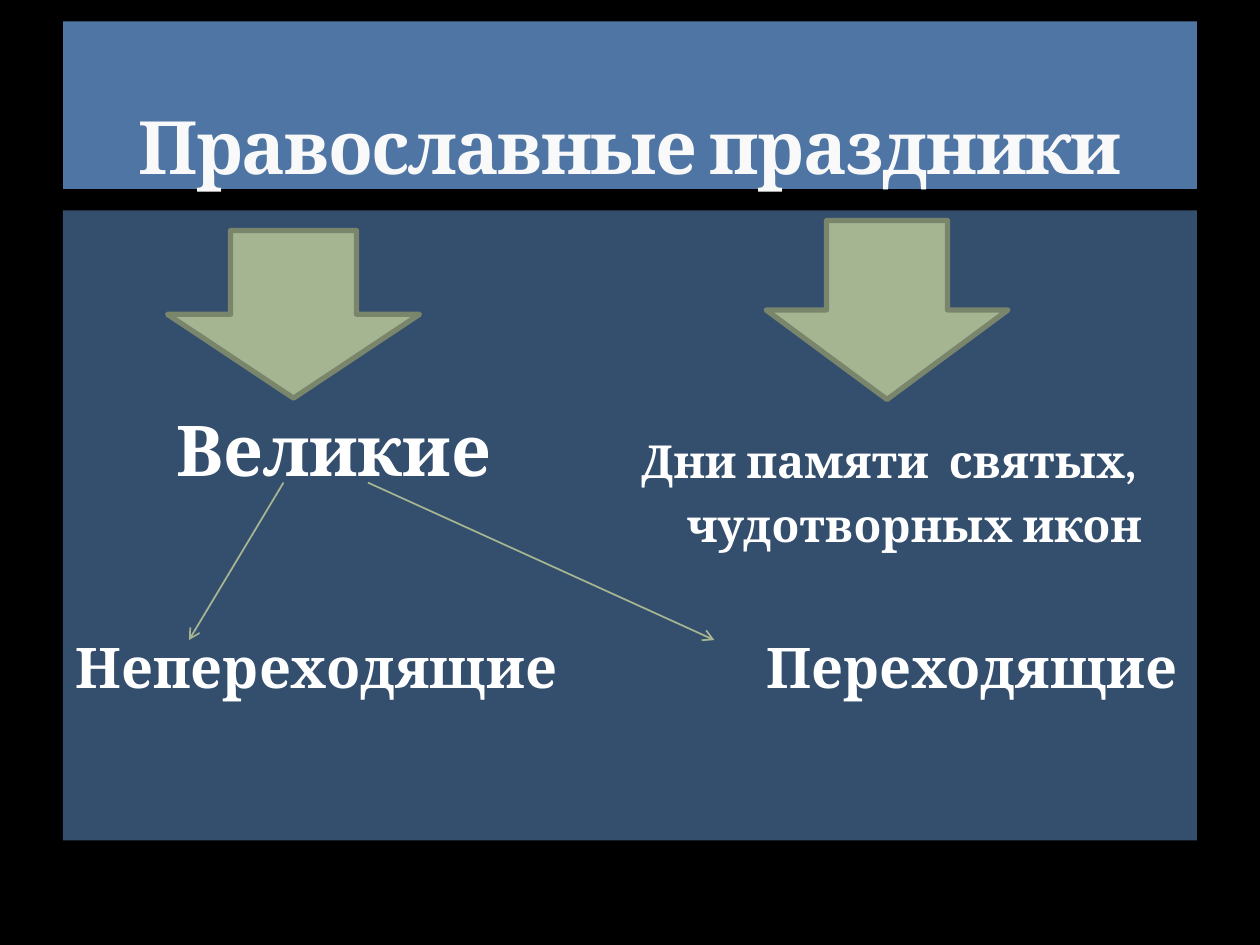
from pptx import Presentation
from pptx import util as u
from pptx.dml.color import RGBColor
from pptx.enum import shapes, text
from pptx.oxml import parse_xml
from pptx.oxml.ns import nsdecls, qn
from lxml import etree

COLORS = {
    "background": "000000", "title_bar": "4E75A3", "panel": "344E6D",
    "arrow": "A5B592", "arrow_edge": "7A866C",
    "title": "F9F9F9", "text": "FFFFFF", "text_edge": "3C4422",
}
FONT = "Cambria"
MARGIN, CONTENT_W = 0.5, 9


def color(name):
    return RGBColor.from_string(COLORS[name])


def inches(*lengths):
    return [u.Inches(n) for n in lengths]


def paint(fill, name):
    fill.solid()
    fill.fore_color.rgb = color(name)


def clear_margins(tf):
    tf.margin_left = tf.margin_right = tf.margin_top = tf.margin_bottom = 0


def add_run(p, words, size, name="text"):
    r = p.add_run()
    r.text = words
    r.font.name, r.font.size, r.font.bold = FONT, u.Pt(size), True
    r.font.color.rgb = color(name)
    return r


def set_title(s, words):
    sp = s.shapes.title
    sp.left, sp.top, sp.width, sp.height = inches(MARGIN, 0.17, CONTENT_W, 1.33)
    paint(sp.fill, "title_bar")
    tf = sp.text_frame
    clear_margins(tf)
    tf.vertical_anchor = text.MSO_ANCHOR.BOTTOM
    p = tf.paragraphs[0]
    p.alignment = text.PP_ALIGN.CENTER
    r = add_run(p, words, 42, "title")
    # Tight letter spacing and a faint outline around the letters
    props = r.font._element
    props.set("spc", "-100")
    props.insert(0, parse_xml(
        f'<a:ln {nsdecls("a")} w="3175"><a:solidFill>'
        f'<a:srgbClr val="{COLORS["text_edge"]}"><a:alpha val="25000"/></a:srgbClr>'
        '</a:solidFill><a:prstDash val="solid"/></a:ln>'))


def add_block(s, kind, box, fill, edge=None):
    sp = s.shapes.add_shape(kind, *inches(*box))
    sp.shadow.inherit = False
    paint(sp.fill, fill)
    if edge:
        sp.line.color.rgb = color(edge)
        sp.line.width = u.Pt(3)
    else:
        sp.line.fill.background()


def add_label(s, box, lines, size, indent=0):
    tf = s.shapes.add_textbox(*inches(*box)).text_frame
    tf.word_wrap = True
    clear_margins(tf)
    for i, words in enumerate(lines):
        p = tf.add_paragraph() if i else tf.paragraphs[0]
        if i:
            p.space_before = u.Pt(5)
            p._p.get_or_add_pPr().set("marL", str(u.Inches(indent)))
        add_run(p, words, size)


def add_pointer(s, start, end):
    line = s.shapes.add_connector(
        shapes.MSO_CONNECTOR.STRAIGHT, *inches(*start, *end))
    line.line.color.rgb = color("arrow")
    line.line.width = u.Pt(1)
    etree.SubElement(line.line._get_or_add_ln(), qn("a:tailEnd"), type="arrow")
    etree.SubElement(line._element.spPr, qn("a:effectLst"))


def main():
    prs = Presentation()
    prs.slide_width, prs.slide_height = inches(10, 7.5)
    s = prs.slides.add_slide(prs.slide_layouts[5])
    paint(s.background.fill, "background")

    # Title and content panel
    set_title(s, "Православные праздники")
    add_block(s, shapes.MSO_SHAPE.RECTANGLE, (MARGIN, 1.67, CONTENT_W, 5), "panel")

    # Block arrows to the two groups
    for box in ((1.33, 1.83, 2, 1.33), (6.08, 1.75, 1.92, 1.42)):
        add_block(s, shapes.MSO_SHAPE.DOWN_ARROW, box, "arrow", "arrow_edge")

    # Groups of feasts
    add_label(s, (1.4, 3.23, 2.9, 0.76), ["Великие"], 40)
    add_label(s, (5.09, 3.44, 4.3, 1.07),
              ["Дни памяти  святых,", "чудотворных икон"], 26, indent=0.36)

    # Kinds of great feasts
    for left, words in ((0.6, "Непереходящие"), (6.08, "Переходящие")):
        add_label(s, (left, 5.02, 4.2 if left < 5 else 3.42, 0.61), [words], 32)

    # Pointers from the great feasts to their kinds
    for x1, x2 in ((2.25, 1.5), (2.92, 5.67)):
        add_pointer(s, (x1, 3.83), (x2, 5.08))

    prs.save("out.pptx")


if __name__ == "__main__":
    main()
